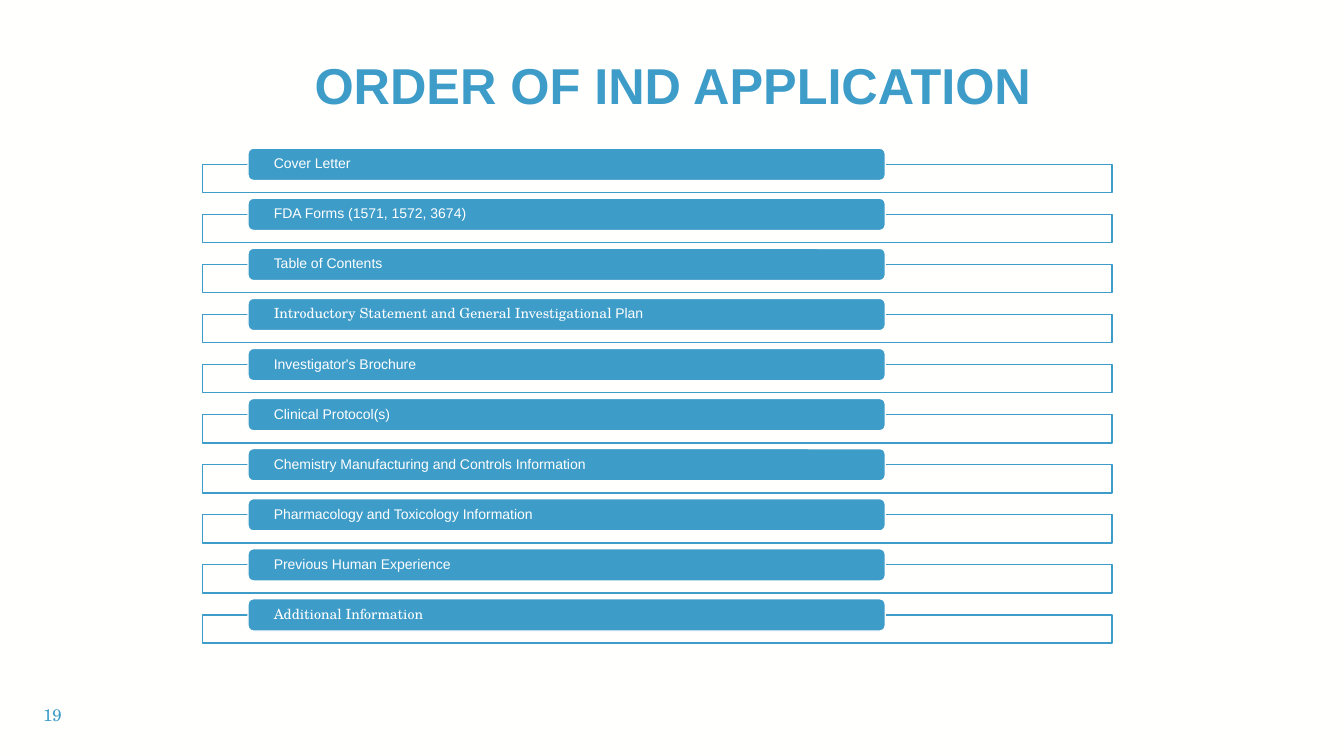
from dataclasses import dataclass

from lxml.etree import SubElement
from pptx import Presentation
from pptx.dml.color import RGBColor
from pptx.enum.shapes import MSO_SHAPE
from pptx.enum.text import MSO_ANCHOR, MSO_AUTO_SIZE, PP_ALIGN
from pptx.oxml.ns import qn
from pptx.util import Inches, Pt


@dataclass(frozen=True)
class Theme:
    blue: RGBColor = RGBColor(0x3E, 0x9C, 0xC9)
    paper: RGBColor = RGBColor(0xFF, 0xFF, 0xFE)
    sans: str = "Arial"
    serif: str = "TeX Gyre Schola"
    title_size: int = 36
    item_size: int = 10
    number_size: int = 12


THEME = Theme()

# Content: each section is a list of (text, font) runs
TITLE = "ORDER OF IND APPLICATION"
PAGE_NUMBER = "19"
SECTIONS = [
    [("Cover Letter", THEME.sans)],
    [("FDA Forms (1571, 1572, 3674)", THEME.sans)],
    [("Table of Contents", THEME.sans)],
    [("Introductory Statement and General Investigational ", THEME.serif),
     ("Plan", THEME.sans)],
    [("Investigator's Brochure", THEME.sans)],
    [("Clinical Protocol(s)", THEME.sans)],
    [("Chemistry Manufacturing and Controls Information", THEME.sans)],
    [("Pharmacology and Toxicology Information", THEME.sans)],
    [("Previous Human Experience", THEME.sans)],
    [("Additional Information", THEME.serif)],
]

# Layout in inches
FRAME_LEFT, FRAME_WIDTH, FRAME_HEIGHT = 2.01, 9.02, 0.28
BAR_LEFT, BAR_WIDTH, BAR_HEIGHT = 2.46, 6.32, 0.32
FIRST_FRAME, LAST_FRAME = 1.63, 6.10
BAR_RISE = 0.16
PITCH = (LAST_FRAME - FIRST_FRAME) / (len(SECTIONS) - 1)


def style_font(font, size, color, name=None, bold=False):
    font.size, font.bold = Pt(size), bold
    font.color.rgb = color
    if name:
        font.name = name


def add_box(shapes, kind, left, top, width, height, fill, line):
    shape = shapes.add_shape(
        kind, Inches(left), Inches(top), Inches(width), Inches(height))
    shape.shadow.inherit = False
    shape.fill.solid()
    shape.fill.fore_color.rgb = fill
    shape.line.color.rgb = line
    shape.line.width = Pt(1)
    return shape


def add_section(shapes, top, runs):
    frame = add_box(shapes, MSO_SHAPE.RECTANGLE, FRAME_LEFT, top,
                    FRAME_WIDTH, FRAME_HEIGHT, THEME.paper, THEME.blue)
    fill_color = frame._element.spPr.find(qn("a:solidFill"))[0]
    SubElement(fill_color, qn("a:alpha")).set("val", "90000")

    bar = add_box(shapes, MSO_SHAPE.ROUNDED_RECTANGLE, BAR_LEFT,
                  top - BAR_RISE, BAR_WIDTH, BAR_HEIGHT,
                  THEME.blue, THEME.paper)
    text_frame = bar.text_frame
    text_frame.word_wrap = True
    text_frame.vertical_anchor = MSO_ANCHOR.MIDDLE
    text_frame.margin_left = text_frame.margin_right = Inches(0.24)
    text_frame.margin_top = text_frame.margin_bottom = 0
    paragraph = text_frame.paragraphs[0]
    paragraph.alignment = PP_ALIGN.LEFT
    paragraph.line_spacing = 0.9
    style_font(paragraph.font, THEME.item_size, THEME.paper)
    for text, font_name in runs:
        run = paragraph.add_run()
        run.text = text
        style_font(run.font, THEME.item_size, THEME.paper, font_name)


def main():
    presentation = Presentation()
    presentation.slide_width = Inches(13.33)
    presentation.slide_height = Inches(7.5)
    slide = presentation.slides.add_slide(presentation.slide_layouts[5])
    slide.background.fill.solid()
    slide.background.fill.fore_color.rgb = THEME.paper

    # Title
    title = slide.shapes.title
    title.left, title.top = Inches(0.83), Inches(0.32)
    title.width, title.height = Inches(11.69), Inches(1.1)
    title.text_frame.text = TITLE
    title.text_frame.auto_size = MSO_AUTO_SIZE.NONE
    title.text_frame.vertical_anchor = MSO_ANCHOR.MIDDLE
    paragraph = title.text_frame.paragraphs[0]
    paragraph.alignment = PP_ALIGN.CENTER
    paragraph.line_spacing = 0.9
    style_font(paragraph.font, THEME.title_size, THEME.blue, THEME.sans, True)

    # Sections of the application
    group = slide.shapes.add_group_shape()
    for index, runs in enumerate(SECTIONS):
        add_section(group.shapes, FIRST_FRAME + index * PITCH, runs)

    # Page number
    number = slide.shapes.add_textbox(
        Inches(0.33), Inches(6.89), Inches(0.5), Inches(0.4))
    number.text_frame.word_wrap = True
    number.text_frame.vertical_anchor = MSO_ANCHOR.MIDDLE
    number.text_frame.text = PAGE_NUMBER
    style_font(number.text_frame.paragraphs[0].font,
               THEME.number_size, THEME.blue, THEME.serif)

    presentation.save("out.pptx")


if __name__ == "__main__":
    main()
